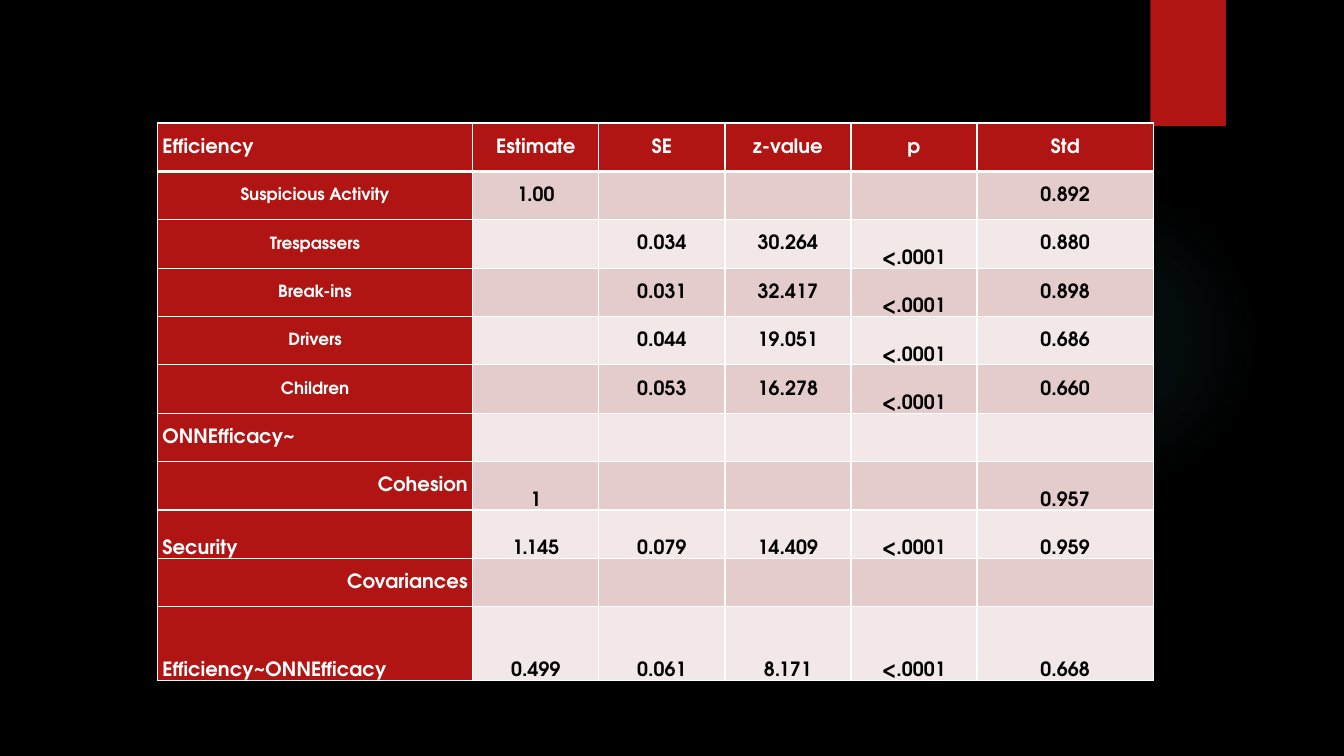
import pptx
import pptx.util
import pptx.dml.color
import pptx.enum.shapes
import pptx.enum.text
import pptx.oxml
import pptx.oxml.ns

RGB = pptx.dml.color.RGBColor
SHAPE = pptx.enum.shapes.MSO_SHAPE
ALIGN = pptx.enum.text.PP_ALIGN
ANCHOR = pptx.enum.text.MSO_ANCHOR

BLACK = RGB(0x00, 0x00, 0x00)
WHITE = RGB(0xFF, 0xFF, 0xFF)
RED = RGB(0xB0, 0x15, 0x13)
ROSE = RGB(0xE4, 0xCC, 0xCC)
PALE = RGB(0xF2, 0xE8, 0xE7)
TEAL = RGB(0x50, 0xB9, 0xC1)

SCALE = 9144  # EMU in one px, 100 px to the inch
FONT = "TeX Gyre Adventor"

LEFT, MID, RIGHT = ALIGN.LEFT, ALIGN.CENTER, ALIGN.RIGHT
CENTRE, BASE = ANCHOR.MIDDLE, ANCHOR.BOTTOM
P_COL = 4

COLS = [313, 125, 125, 125, 125, 175]
HEIGHTS = [48] * 10 + [73]

# label alignment, label anchor, value anchor, texts
ROWS = [
    (LEFT, CENTRE, CENTRE, ["Efficiency", "Estimate", "SE", "z-value", "p", "Std"]),
    (MID, CENTRE, CENTRE, ["Suspicious Activity", "1.00", "", "", "", "0.892"]),
    (MID, CENTRE, CENTRE, ["Trespassers", "", "0.034", "30.264", "<.0001", "0.880"]),
    (MID, CENTRE, CENTRE, ["Break-ins", "", "0.031", "32.417", "<.0001", "0.898"]),
    (MID, CENTRE, CENTRE, ["Drivers", "", "0.044", "19.051", "<.0001", "0.686"]),
    (MID, CENTRE, CENTRE, ["Children", "", "0.053", "16.278", "<.0001", "0.660"]),
    (LEFT, CENTRE, CENTRE, ["ONNEfficacy~", "", "", "", "", ""]),
    (RIGHT, CENTRE, BASE, ["Cohesion", "1", "", "", "", "0.957"]),
    (LEFT, BASE, BASE, ["Security", "1.145", "0.079", "14.409", "<.0001", "0.959"]),
    (RIGHT, CENTRE, BASE, ["Covariances", "", "", "", "", ""]),
    (LEFT, BASE, BASE,
     ["Efficiency~ONNEfficacy", "0.499", "0.061", "8.171", "<.0001", "0.668"]),
]


def px(num):
    return pptx.util.Emu(num * SCALE)


def assign(thing, values):
    for name, value in values.items():
        setattr(thing, name, value)


class Page:
    """Holds the text style and the slide being drawn."""

    def __init__(self, deck, back):
        self.style = {"name": FONT, "bold": True}
        self.slide = deck.slides.add_slide(deck.slide_layouts[6])
        self.slide.background.fill.solid()
        self.slide.background.fill.fore_color.rgb = back

    def shape(self, kind, box, color):
        item = self.slide.shapes.add_shape(kind, *map(px, box))
        item.shadow.inherit = False
        item.line.fill.background()
        item.fill.solid()
        item.fill.fore_color.rgb = color
        return item

    def glow(self, box, color, stops):
        """Draw a disc that fades outward; stops are (place, opacity) in percent."""
        disc = self.shape(SHAPE.OVAL, box, color)
        marks = "".join(
            f'<a:gs pos="{place * 1000}"><a:srgbClr val="{color}">'
            f'<a:alpha val="{alpha * 1000}"/></a:srgbClr></a:gs>'
            for place, alpha in stops)
        fade = pptx.oxml.parse_xml(
            f'<a:gradFill {pptx.oxml.ns.nsdecls("a")}><a:gsLst>{marks}</a:gsLst>'
            '<a:path path="circle"><a:fillToRect l="50000" t="50000" r="50000" '
            'b="50000"/></a:path></a:gradFill>')
        solid = disc.element.spPr.find(pptx.oxml.ns.qn("a:solidFill"))
        disc.element.spPr.replace(solid, fade)

    def border(self, cell, color, widths):
        """Add the cell edges; widths are points for left, right, top, bottom."""
        props = cell._tc.get_or_add_tcPr()
        for side, width in zip("LRTB", widths):
            props.append(pptx.oxml.parse_xml(
                f'<a:ln{side} {pptx.oxml.ns.nsdecls("a")} '
                f'w="{pptx.util.Pt(width)}"><a:solidFill><a:srgbClr val="{color}"/>'
                f'</a:solidFill></a:ln{side}>'))

    def cell(self, cell, text, fill, color, size, align, anchor):
        cell.fill.solid()
        cell.fill.fore_color.rgb = fill
        if not text:
            return
        assign(cell, {"margin_left": px(5), "margin_right": px(5), "margin_top": 0,
                      "margin_bottom": 0, "vertical_anchor": anchor})
        para = cell.text_frame.paragraphs[0]
        assign(para, {"alignment": align, "line_spacing": 1.07})
        run = para.add_run()
        run.text = text
        assign(run.font, {**self.style, "size": pptx.util.Pt(size)})
        run.font.color.rgb = color

    def table(self, left, top, cols, heights, rows):
        frame = self.slide.shapes.add_table(
            len(rows), len(cols), px(left), px(top), px(sum(cols)), px(sum(heights)))
        grid = frame.table
        for col, width in zip(grid.columns, cols):
            col.width = px(width)
        for row, height in zip(grid.rows, heights):
            row.height = px(height)
        for i, (align, anchor, base, texts) in enumerate(rows):
            band = ROSE if i % 2 else PALE
            for j, text in enumerate(texts):
                cell = grid.cell(i, j)
                self.border(cell, WHITE, (1, 1, 3 if i == 1 else 1, 3 if i == 0 else 1))
                if j == 0:
                    size = 12 if align == MID else 14
                    self.cell(cell, text, RED, WHITE, size, align, anchor)
                elif i == 0:
                    self.cell(cell, text, RED, WHITE, 14, MID, base)
                else:
                    spot = BASE if j == P_COL else base
                    self.cell(cell, text, band, BLACK, 14, MID, spot)


def main():
    deck = pptx.Presentation()
    assign(deck, {"slide_width": px(1333), "slide_height": px(750)})
    page = Page(deck, BLACK)
    page.glow((941, 183, 308, 308), TEAL, [(0, 7), (36, 6), (69, 0), (100, 0)])
    page.shape(SHAPE.RECTANGLE, (1141, 0, 75, 125), RED)
    page.table(156, 122, COLS, HEIGHTS, ROWS)
    deck.save("out.pptx")


if __name__ == "__main__":
    main()
